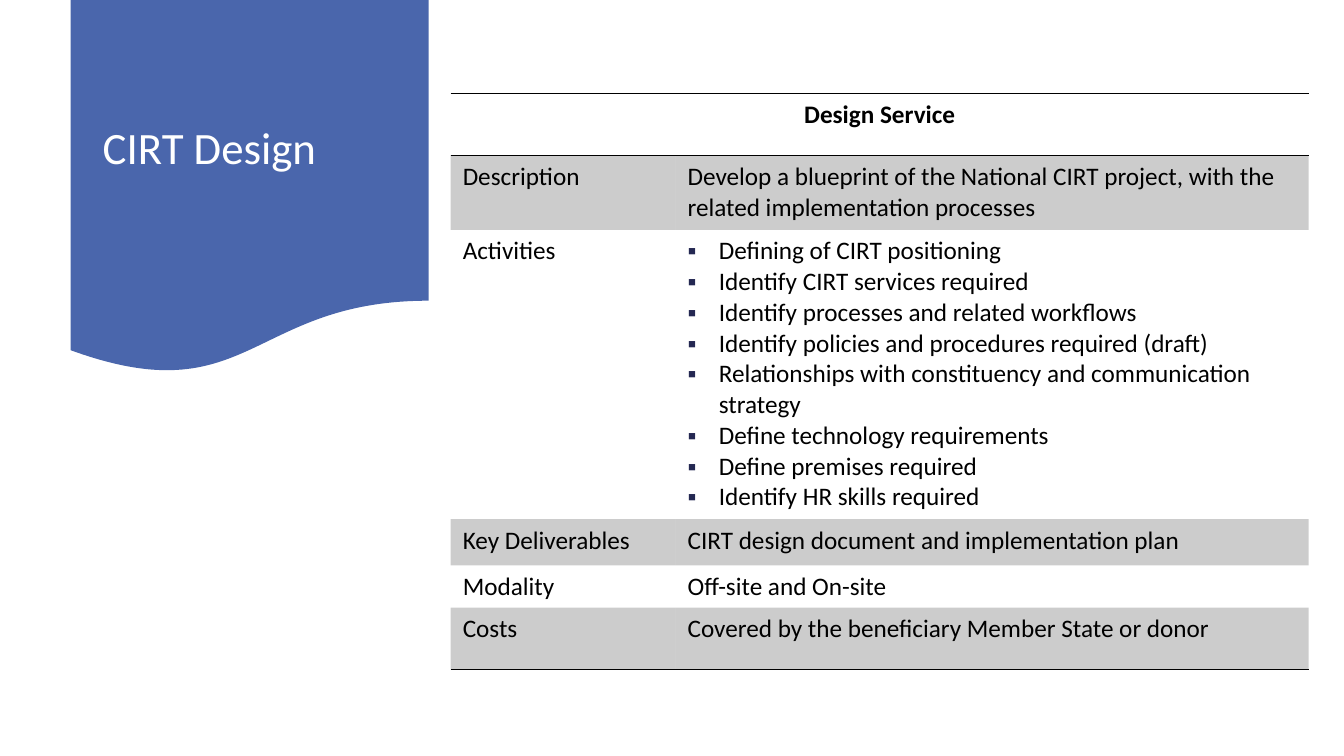
from lxml.etree import SubElement, fromstring
from pptx import Presentation
from pptx.dml.color import RGBColor
from pptx.enum.shapes import MSO_SHAPE
from pptx.enum.text import MSO_ANCHOR, PP_ALIGN
from pptx.oxml.ns import nsdecls, qn
from pptx.util import Inches, Pt

TITLE = "CIRT Design"
HEADER = "Design Service"
SERVICE_ROWS = [
    ("Description", ["Develop a blueprint of the National CIRT project, with the related implementation processes"]),
    ("Activities", [
        "Defining of CIRT positioning",
        "Identify CIRT services required",
        "Identify processes and related workflows",
        "Identify policies and procedures required (draft)",
        "Relationships with constituency and communication strategy",
        "Define technology requirements",
        "Define premises required",
        "Identify HR skills required",
    ]),
    ("Key Deliverables", ["CIRT design document and implementation plan"]),
    ("Modality", ["Off-site and On-site"]),
    ("Costs", ["Covered by the beneficiary Member State or donor"]),
]
COLUMN_WIDTHS = [2.23, 6.28]
ROW_HEIGHTS = [0.61, 0.74, 2.87, 0.46, 0.42, 0.61]
COLORS = {"banner": "4A66AC", "title": "FFFFFF", "ink": "000000", "bullet": "242852"}
FONT = "Calibri"
BAND_ALPHA = "20000"
NO_GRID_STYLE = "{2D5ABB26-0587-4C30-8999-92F81FD0307C}"


def rgb(name):
    return RGBColor.from_string(COLORS[name])


def set_font(paragraph, size, color, bold=False):
    font = paragraph.font
    font.name, font.size, font.bold = FONT, Pt(size), bold
    font.color.rgb = rgb(color)


def add_bullet(paragraph):
    props = paragraph._p.get_or_add_pPr()
    props.set("marL", str(Inches(0.31)))
    props.set("indent", str(Inches(-0.31)))
    color = SubElement(props, qn("a:buClr"))
    SubElement(color, qn("a:srgbClr"), val=COLORS["bullet"])
    SubElement(props, qn("a:buFont"), typeface="Arial")
    SubElement(props, qn("a:buChar"), char="▪")


def add_rules(cell, sides):
    props = cell._tc.get_or_add_tcPr()
    for position, side in enumerate(sides):
        props.insert(position, fromstring(
            f'<a:ln{side} {nsdecls("a")} w="{Pt(1)}"><a:solidFill>'
            f'<a:srgbClr val="{COLORS["ink"]}"/></a:solidFill></a:ln{side}>'))


def fill_cell(cell, lines, banded=False, bold=False, align=PP_ALIGN.LEFT):
    cell.margin_left = cell.margin_right = Inches(0.12)
    cell.margin_top = cell.margin_bottom = Inches(0.06)
    cell.text = "\n".join(lines)
    for paragraph in cell.text_frame.paragraphs:
        paragraph.alignment = align
        if len(lines) > 1:
            add_bullet(paragraph)
        set_font(paragraph, 18, "ink", bold)
    if banded:
        cell.fill.solid()
        cell.fill.fore_color.rgb = rgb("ink")
        tint = cell._tc.tcPr.find(".//" + qn("a:srgbClr"))
        SubElement(tint, qn("a:alpha"), val=BAND_ALPHA)
    else:
        cell.fill.background()


def add_banner(slide):
    banner = slide.shapes.add_shape(
        MSO_SHAPE.FLOWCHART_DOCUMENT, Inches(0.7), 0, Inches(3.55), Inches(3.72))
    banner.shadow.inherit = False
    banner.fill.solid()
    banner.fill.fore_color.rgb = rgb("banner")
    banner.line.fill.background()

    title = slide.shapes.add_textbox(
        Inches(0.92), Inches(0.19), Inches(3.11), Inches(2.59)).text_frame
    title.word_wrap = True
    title.vertical_anchor = MSO_ANCHOR.MIDDLE
    title.text = TITLE
    title.paragraphs[0].line_spacing = 0.9
    set_font(title.paragraphs[0], 32, "title")


def add_service_table(slide):
    frame = slide.shapes.add_table(
        len(ROW_HEIGHTS), len(COLUMN_WIDTHS), Inches(4.47), Inches(0.93),
        Inches(sum(COLUMN_WIDTHS)), Inches(sum(ROW_HEIGHTS)))
    table = frame.table
    table.first_row = table.horz_banding = False
    table._tbl.tblPr.find(qn("a:tableStyleId")).text = NO_GRID_STYLE
    for column, width in zip(table.columns, COLUMN_WIDTHS):
        column.width = Inches(width)
    for row, height in zip(table.rows, ROW_HEIGHTS):
        row.height = Inches(height)

    header = table.cell(0, 0)
    header.merge(table.cell(0, 1))
    fill_cell(header, [HEADER], bold=True, align=PP_ALIGN.CENTER)
    for index, (label, details) in enumerate(SERVICE_ROWS, start=1):
        for column, lines in enumerate(([label], details)):
            fill_cell(table.cell(index, column), lines, banded=index % 2 == 1)
    for column in range(len(COLUMN_WIDTHS)):
        add_rules(table.cell(0, column), "TB")
        add_rules(table.cell(len(SERVICE_ROWS), column), "B")


def main():
    deck = Presentation()
    deck.slide_width, deck.slide_height = Inches(13.33), Inches(7.5)
    slide = deck.slides.add_slide(deck.slide_layouts[6])
    add_banner(slide)
    add_service_table(slide)
    deck.save("out.pptx")


if __name__ == "__main__":
    main()
